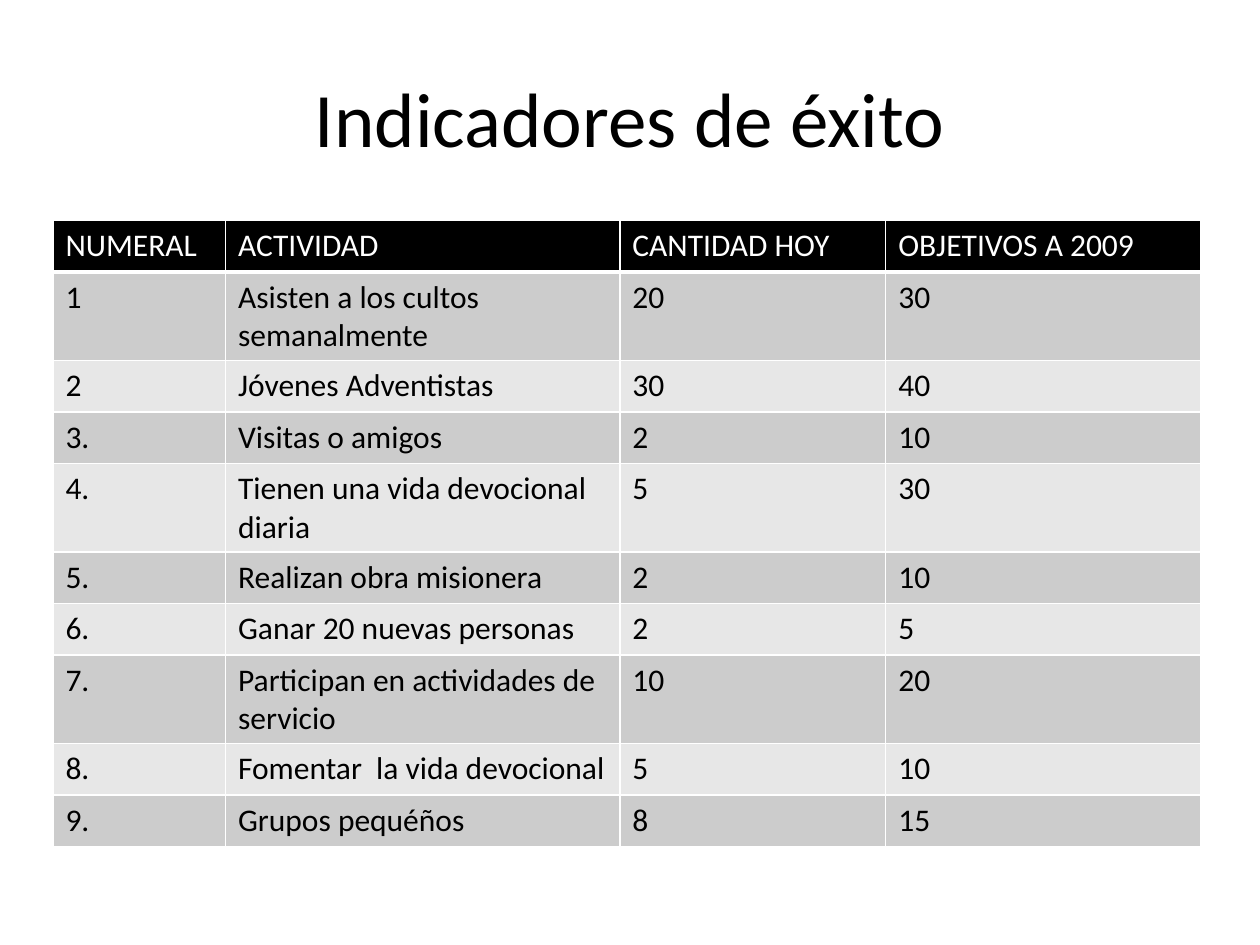
import pptx
import pptx.util
import pptx.dml.color
import pptx.enum.text
import pptx.oxml.ns
import lxml.etree

WIDE, HIGH = 10, 7.5
FONT = "Calibri"
HUES = {
    "ink": "000000",
    "paper": "FFFFFF",
    "dark": "CCCCCC",
    "light": "E7E7E7",
}
COLS = [1.37, 3.13, 2.11, 2.5]
ROW = 0.41
HEAD = ["NUMERAL", "ACTIVIDAD", "CANTIDAD HOY", "OBJETIVOS A 2009"]
GOALS = [
    ["1", "Asisten a los cultos semanalmente", "20", "30"],
    ["2", "Jóvenes Adventistas", "30", "40"],
    ["3.", "Visitas o amigos", "2", "10"],
    ["4.", "Tienen una vida devocional diaria", "5", "30"],
    ["5.", "Realizan obra misionera", "2", "10"],
    ["6.", "Ganar 20 nuevas personas", "2", "5"],
    ["7.", "Participan en actividades de servicio", "10", "20"],
    ["8.", "Fomentar  la vida devocional", "5", "10"],
    ["9.", "Grupos pequéños", "8", "15"],
]


def inch(size):
    return pptx.util.Inches(size)


def color(name):
    return pptx.dml.color.RGBColor.from_string(HUES[name])


def write(frame, text, size, hue):
    run = frame.paragraphs[0].add_run()
    run.text = text
    run.font.name = FONT
    run.font.size = pptx.util.Pt(size)
    run.font.bold = False
    run.font.color.rgb = color(hue)


def title(slide, text):
    box = slide.shapes.add_textbox(
        inch(WIDE * 0.05), inch(HIGH * 0.04), inch(WIDE * 0.9), inch(1.25))
    frame = box.text_frame
    frame.word_wrap = True
    frame.vertical_anchor = pptx.enum.text.MSO_ANCHOR.MIDDLE
    frame.paragraphs[0].alignment = pptx.enum.text.PP_ALIGN.CENTER
    write(frame, text, 44, "ink")


def border(cell, base):
    """Draw 1 pt sides in the paper colour, with a chosen bottom width."""
    name = pptx.oxml.ns.qn
    props = cell._tc.get_or_add_tcPr()
    for side, width in (("L", 1), ("R", 1), ("T", 1), ("B", base)):
        line = lxml.etree.SubElement(
            props, name("a:ln" + side), w=str(pptx.util.Pt(width)))
        fill = lxml.etree.SubElement(line, name("a:solidFill"))
        lxml.etree.SubElement(fill, name("a:srgbClr"), val=HUES["paper"])


def fill_row(table, row, words, back, hue, base):
    for col, text in enumerate(words):
        cell = table.cell(row, col)
        border(cell, base)
        cell.fill.solid()
        cell.fill.fore_color.rgb = color(back)
        write(cell.text_frame, text, 18, hue)


def grid(slide):
    count = len(GOALS) + 1
    table = slide.shapes.add_table(
        count, len(COLS), inch(0.42), inch(1.75),
        inch(sum(COLS)), inch(ROW * count)).table
    for col, width in zip(table.columns, COLS):
        col.width = inch(width)
    for row in table.rows:
        row.height = inch(ROW)
    # Header, then bands in turn
    fill_row(table, 0, HEAD, "ink", "paper", 3)
    for row, words in enumerate(GOALS, 1):
        back = "dark" if row % 2 else "light"
        fill_row(table, row, words, back, "ink", 1)


def main():
    deck = pptx.Presentation()
    deck.slide_width, deck.slide_height = inch(WIDE), inch(HIGH)
    slide = deck.slides.add_slide(deck.slide_layouts[6])
    title(slide, "Indicadores de éxito")
    grid(slide)
    deck.save("out.pptx")


if __name__ == "__main__":
    main()
